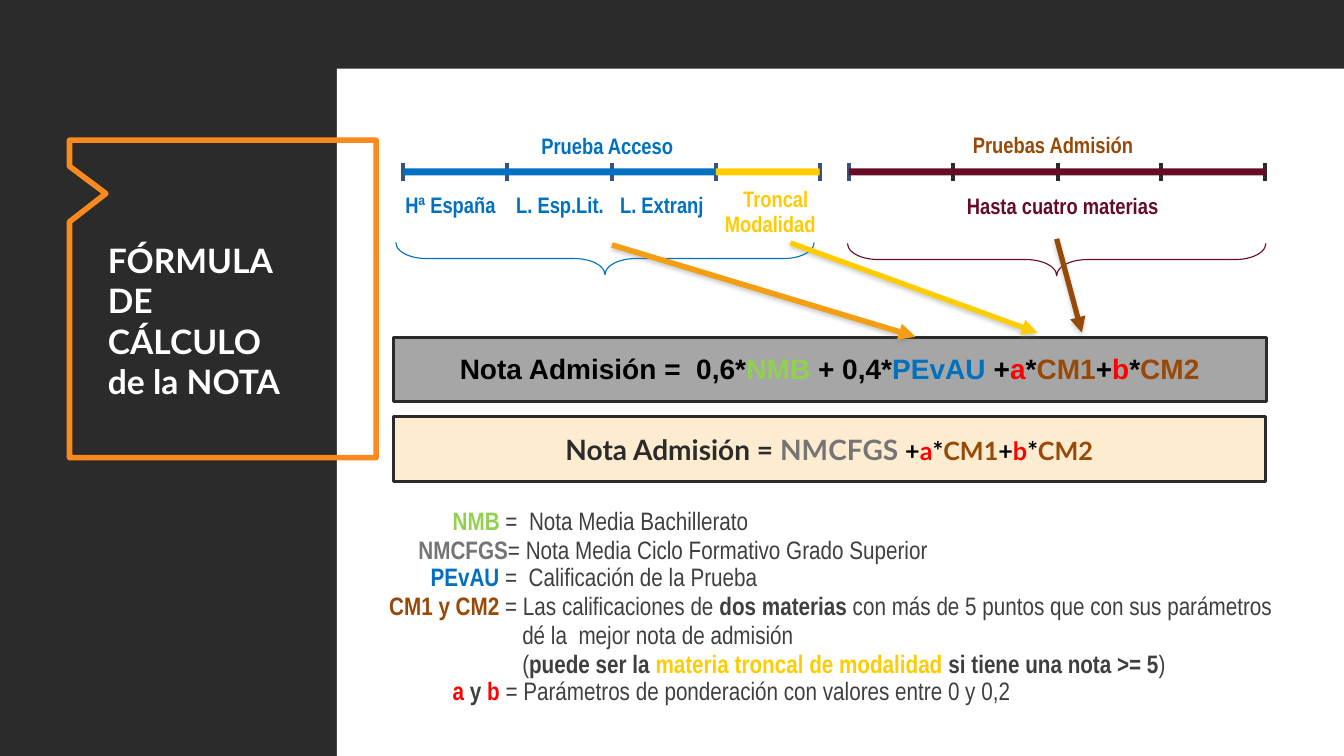
from dataclasses import dataclass

from lxml.etree import SubElement
from pptx import Presentation
from pptx.dml.color import RGBColor
from pptx.enum.shapes import MSO_CONNECTOR, MSO_SHAPE
from pptx.enum.text import MSO_ANCHOR, PP_ALIGN
from pptx.oxml.ns import qn
from pptx.util import Pt

PX = 9144  # EMU per px, 100 px to the inch


@dataclass(frozen=True)
class Theme:
    dark: str = "2B2B2B"
    white: str = "FFFFFF"
    black: str = "000000"
    text: str = "3F3F3F"
    grey: str = "757575"
    bar: str = "A6A6A6"
    cream: str = "FDECD0"
    frame: str = "FA891E"
    orange: str = "F49E14"
    yellow: str = "FFCC00"
    blue: str = "0070C0"
    tick: str = "39527B"
    green: str = "92D050"
    red: str = "FF0000"
    brown: str = "984807"
    wine: str = "670C25"
    shadow: str = "808080"
    heading: str = "Lato"
    formula: str = "Arial"
    body: str = "Arial Narrow"
    title_pt: int = 24
    formula_pt: int = 20
    legend_pt: int = 18
    label_pt: int = 16


T = Theme()

WEIGHTED = [("+", T.black), ("a", T.red), ("*", T.black), ("CM1", T.brown),
            ("+", T.black), ("b", T.red), ("*", T.black), ("CM2", T.brown)]

# Left indent, line spacing, space before, runs of (text, colour, bold)
LEGEND = [
    (76, 20.5, 3.6, [("NMB", T.green, True), (" =  Nota Media Bachillerato", T.text, False)]),
    (42, 20.5, 0, [("NMCFGS", T.grey, True),
                   ("= Nota Media Ciclo Formativo Grado Superior", T.text, False)]),
    (54, 19.4, 0, [("PEvAU", T.blue, True), (" =  Calificación de la Prueba", T.text, False)]),
    (13, 19.4, 1.4, [("CM1 y CM2 ", T.brown, True), ("= Las calificaciones de ", T.text, False),
                     ("dos materias ", T.text, True),
                     ("con más de 5 puntos que con sus parámetros", T.text, False)]),
    (145, 19.4, 1.4, [("dé la  mejor nota de admisión", T.text, False)]),
    (145, 19.4, 1.4, [("(", T.text, False), ("puede ser la ", T.text, True),
                      ("materia troncal de modalidad ", T.yellow, True),
                      ("si tiene una nota >= 5", T.text, True), (")", T.text, False)]),
    (76, 19.1, 0, [("a", T.red, True), (" y ", T.text, True), ("b ", T.red, True),
                   ("= Parámetros de ponderación con valores entre 0 y 0,2", T.text, False)]),
]


def rgb(colour):
    return RGBColor.from_string(colour)


def box_emu(box):
    return [v * PX for v in box]


def write(p, runs, font, size):
    """Add runs of (text, colour[, bold]); bold unless told otherwise."""
    for text, colour, *bold in runs:
        r = p.add_run()
        r.text = text
        r.font.name = font
        r.font.size = Pt(size)
        r.font.bold = bold[0] if bold else True
        r.font.color.rgb = rgb(colour)


def add_text(s, box, inset=(0, 0)):
    tf = s.shapes.add_textbox(*box_emu(box)).text_frame
    tf.word_wrap = True
    tf.margin_left = tf.margin_right = inset[0] * PX
    tf.margin_top = tf.margin_bottom = inset[1] * PX
    return tf


def add_label(s, box, text, colour, indent=0, spacing=None):
    p = add_text(s, box).paragraphs[0]
    if indent:
        p._p.get_or_add_pPr().set("indent", str(indent * PX))
    if spacing:
        p.line_spacing = Pt(spacing)
    write(p, [(text, colour)], T.body, T.label_pt)


def add_rect(s, box, fill, outline=None):
    sp = s.shapes.add_shape(MSO_SHAPE.RECTANGLE, *box_emu(box))
    sp.shadow.inherit = False
    sp.fill.solid()
    sp.fill.fore_color.rgb = rgb(fill)
    if outline:
        sp.line.color.rgb = rgb(outline)
        sp.line.width = Pt(2.25)
    else:
        sp.line.fill.background()
    return sp


def add_line(s, start, end, colour, width):
    """Add a straight line; return it with its empty effect list."""
    line = s.shapes.add_connector(MSO_CONNECTOR.STRAIGHT, *box_emu(start + end))
    line.line.color.rgb = rgb(colour)
    line.line.width = Pt(width)
    return line, SubElement(line._element.spPr, qn("a:effectLst"))


def add_arrow(s, start, end, colour, width):
    line, effects = add_line(s, start, end, colour, width)
    ln = line._element.spPr.find(qn("a:ln"))
    SubElement(ln, qn("a:tailEnd"), type="triangle")
    shadow = SubElement(effects, qn("a:outerShdw"), blurRad=str(Pt(3.1)), dist=str(Pt(1.6)),
                        dir="5400000", rotWithShape="0")
    clr = SubElement(shadow, qn("a:srgbClr"), val=T.shadow)
    SubElement(clr, qn("a:alpha"), val="38000")


def add_scale(s, left, bar_colours, tick_colours):
    """Draw a row of equal bars with a tick at each end and joint."""
    xs = [left + round(i * 103.3) for i in range(len(tick_colours))]
    for x, colour in zip(xs, tick_colours):
        add_line(s, (x, 162), (x, 180), colour, 2.85)
    for x, x_next, colour in zip(xs, xs[1:], bar_colours):
        add_rect(s, (x, 167, x_next - x, 7), colour)


def add_brace(s, left, top, width, height, colour):
    """Add a brace whose tip points down, turned about its centre."""
    x = left + (width - height) // 2
    y = top + (height - width) // 2
    sp = s.shapes.add_shape(MSO_SHAPE.RIGHT_BRACE, *box_emu((x, y, height, width)))
    sp.rotation = 90
    sp.adjustments[0] = 0.95
    sp.shadow.inherit = False
    sp.fill.background()
    sp.line.color.rgb = rgb(colour)
    sp.line.width = Pt(0.8)


def add_frame(s):
    builder = s.shapes.build_freeform(69, 139, scale=PX)
    builder.add_line_segments([(373, 139), (373, 454), (69, 454), (69, 220), (105, 192),
                               (69, 165)], close=True)
    sp = builder.convert_to_shape()
    sp.shadow.inherit = False
    sp.fill.background()
    sp.line.color.rgb = rgb(T.frame)
    sp.line.width = Pt(4)
    SubElement(sp._element.spPr.find(qn("a:ln")), qn("a:round"))


def place_title(s, behind):
    """Format the title and raise it above the given shape."""
    title = s.shapes.title
    behind._element.addnext(title._element)
    title.left, title.top, title.width, title.height = box_emu((97, 233, 208, 172))
    tf = title.text_frame
    tf.word_wrap = True
    tf.vertical_anchor = MSO_ANCHOR.TOP
    p = tf.paragraphs[0]
    p.alignment = PP_ALIGN.LEFT
    write(p, [("FÓRMULA DE CÁLCULO de la NOTA", T.white)], T.heading, T.title_pt)


def add_exams(s):
    add_label(s, (537, 131, 138, 27), "Prueba Acceso", T.blue)
    add_label(s, (965, 130, 167, 27), "Pruebas Admisión", T.brown)
    add_scale(s, 400, [T.blue] * 3 + [T.yellow], [T.tick] * 5)
    add_scale(s, 842, [T.wine] * 4, [T.tick] + [T.dark] * 4)
    add_label(s, (402, 190, 100, 27), "Hª España", T.blue)
    add_label(s, (512, 190, 100, 27), "L. Esp.Lit.", T.blue)
    add_label(s, (615, 190, 95, 27), "L. Extranj", T.blue)
    add_label(s, (719, 185, 95, 51), "Troncal Modalidad", T.yellow, indent=18, spacing=17.9)
    add_label(s, (959, 191, 231, 28), "Hasta cuatro materias", T.wine, spacing=18.6)
    add_brace(s, 393, 241, 415, 32, T.blue)
    add_brace(s, 841, 242, 415, 32, T.wine)


def add_formulas(s):
    add_rect(s, (390, 335, 866, 63), T.bar, T.dark)
    p = add_text(s, (449, 345, 787, 41), (7, 4)).paragraphs[0]
    write(p, [("Nota Admisión =  0,6*", T.black), ("NMB ", T.green), ("+ 0,4*", T.black),
              ("PEvAU ", T.blue)] + WEIGHTED, T.formula, T.formula_pt)
    tf = add_rect(s, (390, 413, 865, 65), T.cream, T.dark).text_frame
    tf.vertical_anchor = MSO_ANCHOR.MIDDLE
    p = tf.paragraphs[0]
    p.alignment = PP_ALIGN.CENTER
    write(p, [("Nota Admisión = ", T.dark), ("NMCFGS ", T.grey)], T.heading, T.formula_pt)
    write(p, WEIGHTED, T.heading, T.legend_pt)


def add_legend(s):
    tf = add_text(s, (373, 503, 939, 202))
    for i, (indent, spacing, before, runs) in enumerate(LEGEND):
        p = tf.add_paragraph() if i else tf.paragraphs[0]
        p._p.get_or_add_pPr().set("marL", str(indent * PX))
        p.line_spacing = Pt(spacing)
        p.space_before = Pt(before)
        write(p, runs, T.body, T.legend_pt)


def main():
    prs = Presentation()
    prs.slide_width, prs.slide_height = box_emu((1333, 750))
    s = prs.slides.add_slide(prs.slide_layouts[5])
    add_rect(s, (0, 0, 1333, 750), T.dark)
    panel = add_rect(s, (334, 68, 999, 682), T.white)
    place_title(s, panel)
    add_frame(s)
    add_exams(s)
    add_formulas(s)
    add_legend(s)
    add_arrow(s, (607, 243), (908, 334), T.orange, 4)
    add_arrow(s, (784, 241), (1029, 330), T.yellow, 3.75)
    add_arrow(s, (1048, 237), (1073, 330), T.brown, 3.75)
    prs.save("out.pptx")


if __name__ == "__main__":
    main()
